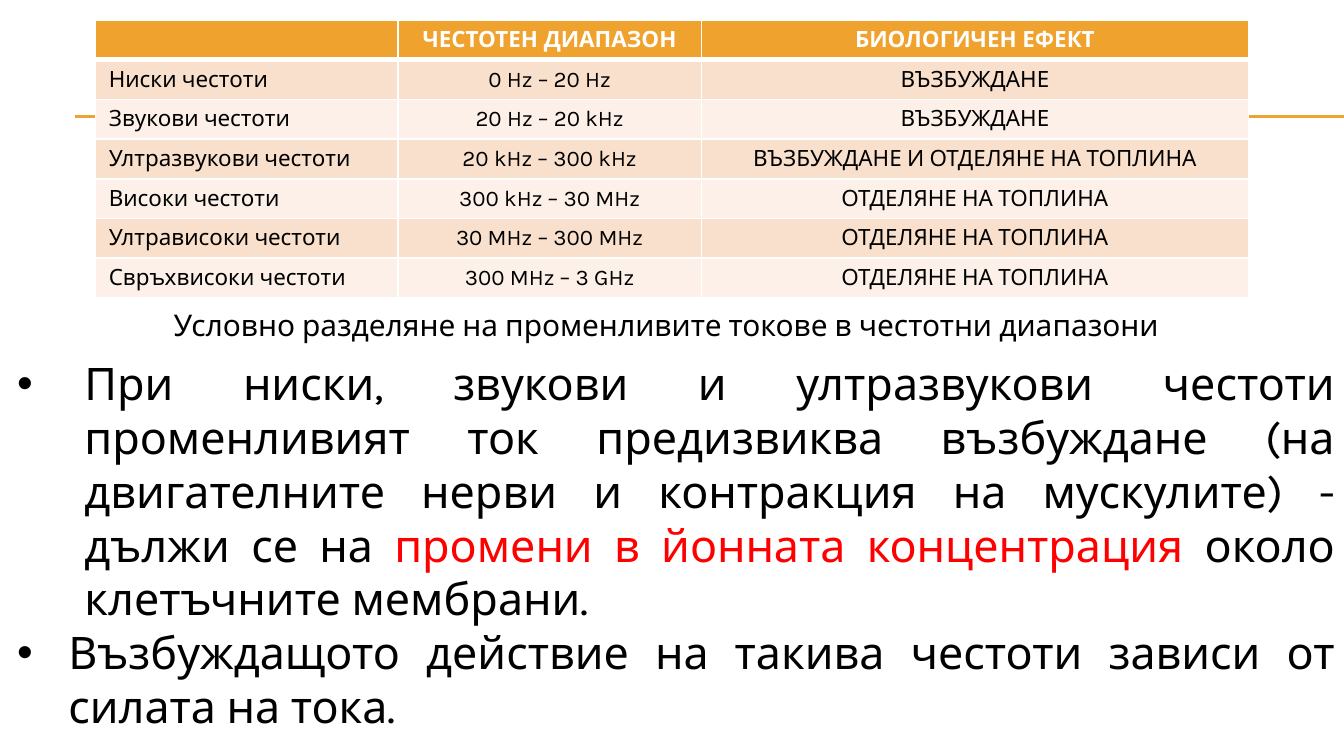
import pptx
import pptx.dml.color
import pptx.enum.shapes
import pptx.enum.text
import pptx.oxml
import pptx.oxml.ns
import pptx.util
import lxml.etree

Inches = pptx.util.Inches
Pt = pptx.util.Pt
ALIGN = pptx.enum.text.PP_ALIGN
ANCHOR = pptx.enum.text.MSO_ANCHOR

FONT = "Karla"
ORANGE, WHITE, BLACK, RED = "F0A22E", "FFFFFF", "000000", "FF0000"
BANDS = ("F9E0CD", "FCF0E8")
EXCITATION, HEAT = "ВЪЗБУЖДАНЕ", "ОТДЕЛЯНЕ НА ТОПЛИНА"
FREQUENCIES = [
    ("", "ЧЕСТОТЕН ДИАПАЗОН", "БИОЛОГИЧЕН ЕФЕКТ"),
    ("Ниски честоти", "0 Hz – 20 Hz", EXCITATION),
    ("Звукови честоти", "20 Hz – 20 kHz", EXCITATION),
    ("Ултразвукови честоти", "20 kHz – 300 kHz", "ВЪЗБУЖДАНЕ И ОТДЕЛЯНЕ НА ТОПЛИНА"),
    ("Високи честоти", "300 kHz – 30 MHz", HEAT),
    ("Ултрависоки честоти", "30 MHz – 300 MHz", HEAT),
    ("Свръхвисоки честоти", "300 MHz – 3 GHz", HEAT),
]
CAPTION = "Условно разделяне на променливите токове в честотни диапазони"
EFFECTS = [
    (0.5, [
        ("При ниски, звукови и ултразвукови честоти променливият ток предизвиква "
         "възбуждане (на двигателните нерви и контракция на мускулите) - дължи се на ", BLACK),
        ("промени в йонната концентрация ", RED),
        ("около клетъчните мембрани.", BLACK),
    ]),
    (0.38, [("Възбуждащото действие на такива честоти зависи от силата на тока.", BLACK)]),
]


def rgb(color):
    """Turn a hex string into a colour."""
    return pptx.dml.color.RGBColor.from_string(color)


def add_run(paragraph, text, size, color=BLACK, bold=False):
    """Append one formatted run."""
    run = paragraph.add_run()
    run.text = text
    run.font.name = FONT
    run.font.size = Pt(size)
    run.font.bold = bold
    run.font.color.rgb = rgb(color)


def add_text_frame(slide, left, top, width, height):
    """Add a wrapping text box and return its text frame."""
    box = slide.shapes.add_textbox(Inches(left), Inches(top), Inches(width), Inches(height))
    box.text_frame.word_wrap = True
    return box.text_frame


def set_borders(cell, **widths):
    """Give a cell white borders of the given widths in points."""
    properties = cell._tc.get_or_add_tcPr()
    for index, (side, width) in enumerate(widths.items()):
        border = pptx.oxml.parse_xml(
            f'<a:ln{side} {pptx.oxml.ns.nsdecls("a")} w="{Pt(width)}"><a:solidFill>'
            f'<a:srgbClr val="{WHITE}"/></a:solidFill></a:ln{side}>')
        properties.insert(index, border)


def add_title_rules(slide, left, top, width):
    """Draw the double rule behind the table."""
    for y in (top, top + 0.01):
        rule = slide.shapes.add_connector(
            pptx.enum.shapes.MSO_CONNECTOR.STRAIGHT,
            Inches(left), Inches(y), Inches(left + width), Inches(y))
        rule.line.color.rgb = rgb(ORANGE)
        rule.line.width = Pt(0.75)
        lxml.etree.SubElement(rule._element.spPr, pptx.oxml.ns.qn("a:effectLst"))


def add_frequency_table(slide, left, top, column_widths, row_height):
    """Place the table of frequency ranges and their effects."""
    table = slide.shapes.add_table(
        len(FREQUENCIES), len(column_widths), Inches(left), Inches(top),
        Inches(sum(column_widths)), Inches(row_height * len(FREQUENCIES))).table
    for column, width in zip(table.columns, column_widths):
        column.width = Inches(width)
    for r, texts in enumerate(FREQUENCIES):
        table.rows[r].height = Inches(row_height)
        header = r == 0
        for c, text in enumerate(texts):
            cell = table.cell(r, c)
            set_borders(cell, L=1, R=1, T=3 if r == 1 else 1, B=3 if header else 1)
            cell.fill.solid()
            cell.fill.fore_color.rgb = rgb(ORANGE if header else BANDS[(r - 1) % 2])
            paragraph = cell.text_frame.paragraphs[0]
            if c > 0:
                cell.vertical_anchor = ANCHOR.MIDDLE
                paragraph.alignment = ALIGN.CENTER
            if text:
                add_run(paragraph, text, 12, WHITE if header else BLACK, header)
            else:
                paragraph.font.size = Pt(12)
                paragraph.font.name = FONT


def add_caption(slide, left, top, width, height):
    """Place the centred table caption."""
    paragraph = add_text_frame(slide, left, top, width, height).paragraphs[0]
    paragraph.alignment = ALIGN.CENTER
    add_run(paragraph, CAPTION, 16)


def add_effects(slide, left, top, width, height):
    """Place the justified bullets about the effects of the current."""
    frame = add_text_frame(slide, left, top, width, height)
    for index, (indent, runs) in enumerate(EFFECTS):
        paragraph = frame.add_paragraph() if index else frame.paragraphs[0]
        paragraph.alignment = ALIGN.JUSTIFY
        properties = paragraph._p.get_or_add_pPr()
        properties.set("marL", str(Inches(indent)))
        properties.set("indent", str(-Inches(indent)))
        for tag, key, value in (("a:buFont", "typeface", "Arial"), ("a:buChar", "char", "•")):
            lxml.etree.SubElement(properties, pptx.oxml.ns.qn(tag)).set(key, value)
        for text, color in runs:
            add_run(paragraph, text, 24, color)


def main():
    """Build and save the slide."""
    deck = pptx.Presentation()
    deck.slide_width = Inches(10)
    deck.slide_height = deck.slide_width * 9 // 16
    slide = deck.slides.add_slide(deck.slide_layouts[6])
    add_title_rules(slide, 0.56, 0.86, 9.44)
    add_frequency_table(slide, 0.71, 0.15, (2.25, 2.26, 4.07), 0.27)
    add_caption(slide, 0, 2.23, 9.92, 0.37)
    add_effects(slide, 0.03, 2.6, 10, 2.52)
    deck.save("out.pptx")


if __name__ == "__main__":
    main()
